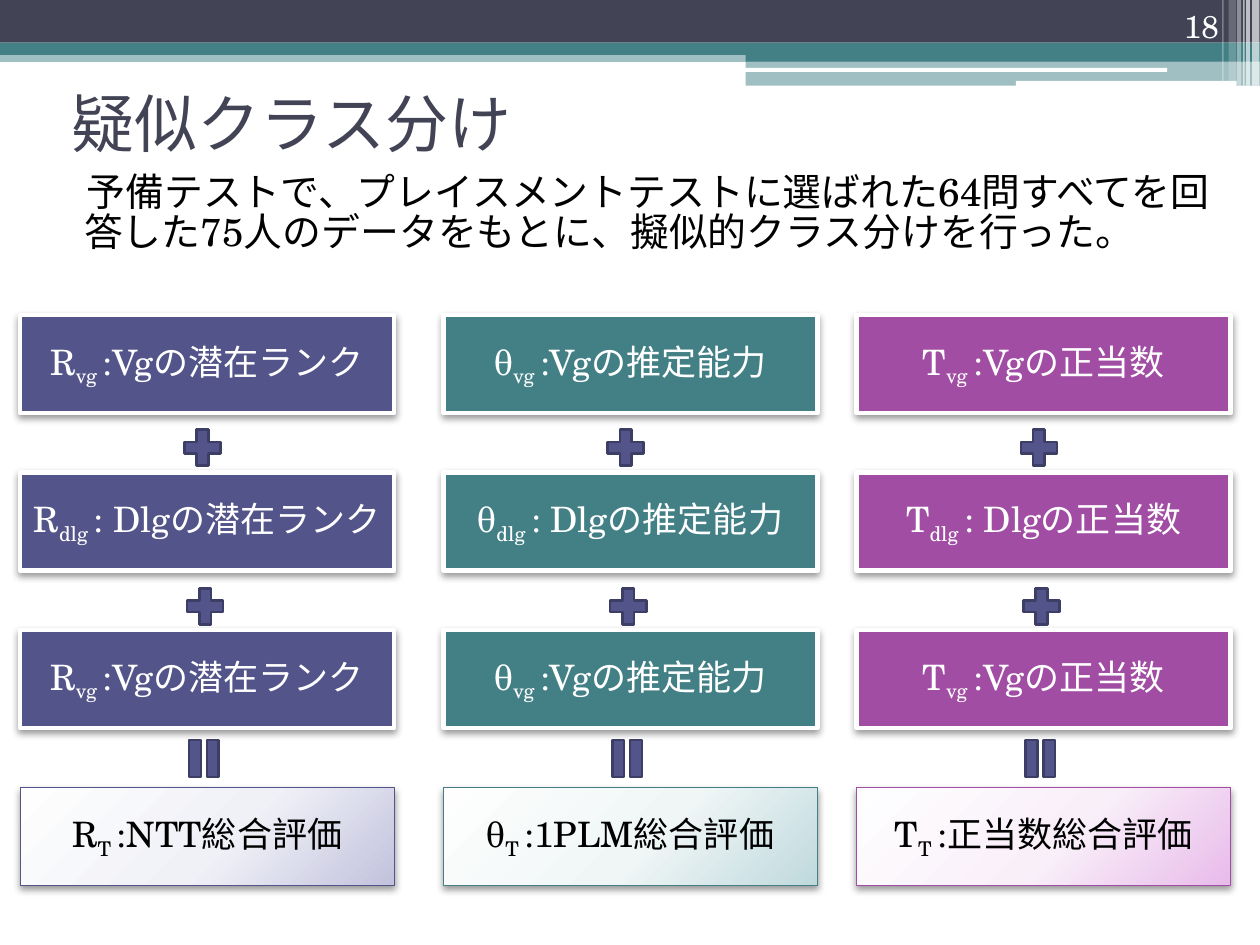
"""Build the slide on simulated class placement: three columns of scores added to a total."""
from pptx import Presentation
from pptx import util as u
from pptx.dml.color import RGBColor
from pptx.enum import shapes, text
from pptx.oxml import parse_xml
from pptx.oxml.ns import nsdecls, qn

COLORS = {"ink": "424456", "teal": "438086", "indigo": "53548A", "purple": "A04DA3",
          "edge": "3D3E66", "white": "FFFFFF", "black": "000000"}
SERIF, SANS = "TeX Gyre Schola", "Lato"
SHAPE = shapes.MSO_SHAPE

TITLE = "疑似クラス分け"
BODY = "予備テストで、プレイスメントテストに選ばれた64問すべてを回答した75人のデータをもとに、擬似的クラス分けを行った。"
NUMBER = "18"

COLUMNS = [
    {"left": 0.41, "symbol": "R", "score": "の潜在ランク", "total": ":NTT総合評価",
     "color": "indigo", "tints": ("FEFEFE", "F0F1F7", "C2C2DD")},
    {"left": 8.94, "symbol": "θ", "score": "の推定能力", "total": ":1PLM総合評価",
     "color": "teal", "tints": ("FEFEFE", "F0F6F6", "BFD9DD")},
    {"left": 17.27, "symbol": "T", "score": "の正当数", "total": ":正当数総合評価",
     "color": "purple", "tints": ("FEFEFF", "F9EFF9", "E8BBEA")},
]
TESTS = [("vg ", ":Vg"), ("dlg ", ": Dlg"), ("vg ", ":Vg")]
BOX_TOP, BOX_STEP, BOX_WIDTH, BOX_HEIGHT = 6.35, 3.175, 7.54, 1.98
SIGNS = [(SHAPE.MATH_PLUS, 3.18, 8.53, 0.99, 0), (SHAPE.MATH_PLUS, 3.23, 11.73, 0.99, 0),
         (SHAPE.MATH_EQUAL, 3.19, 14.78, 1.02, 90)]

BANDS = [
    (SHAPE.RECTANGLE, (0, 1.02, 25.4, 0.23), "teal", 50),
    (SHAPE.RECTANGLE, (0, 0, 25.4, 0.86), "ink", 100),
    (SHAPE.RECTANGLE, (0, 0.86, 25.4, 0.25), "teal", 100),
    (SHAPE.RECTANGLE, (15.03, 0.99, 10.37, 0.25), "teal", 100),
    (SHAPE.RECTANGLE, (15.03, 1.23, 10.37, 0.5), "teal", 50),
    (SHAPE.ROUNDED_RECTANGLE, (15.02, 1.37, 8.51, 0.08), "white", 100),
    (SHAPE.ROUNDED_RECTANGLE, (20.48, 1.63, 4.45, 0.1), "white", 100),
]
STRIPES = [(25.24, 0.15, 1.73, 65), (25.12, 0.08, 1.73, 65), (25.06, 0.03, 1.73, 60),
           (24.94, 0.08, 1.73, 40), (24.77, 0.15, 1.63, 20), (24.64, 0.03, 1.63, 30)]


def rgb(name):
    return RGBColor.from_string(COLORS[name])


def place(item, left, top, width, height):
    item.left, item.top, item.width, item.height = map(u.Cm, (left, top, width, height))


def add_figure(page, kind, area, fill, line=None, weight=0):
    figure = page.shapes.add_shape(kind, *map(u.Cm, area))
    figure.shadow.inherit = False
    figure.fill.solid()
    figure.fill.fore_color.rgb = rgb(fill)
    if line:
        figure.line.color.rgb = rgb(line)
        figure.line.width = u.Pt(weight)
    else:
        figure.line.fill.background()
    return figure


def add_band(page, kind, area, fill, opacity):
    band = add_figure(page, kind, area, fill)
    if opacity < 100:
        color = band._element.spPr.find(qn("a:solidFill"))[0]
        color.append(parse_xml(f'<a:alpha {nsdecls("a")} val="{opacity * 1000}"/>'))


def style(span, size, color, font=SERIF):
    span.font.size, span.font.name = u.Pt(size), font
    span.font.color.rgb = rgb(color)


def add_shadow(box):
    box._element.spPr.find(qn("a:effectLst")).append(parse_xml(
        f'<a:outerShdw {nsdecls("a")} blurRad="{u.Pt(4.1)}" dist="{u.Pt(2)}" dir="5400000" '
        'rotWithShape="0"><a:srgbClr val="000000"><a:alpha val="40000"/></a:srgbClr></a:outerShdw>'))


def tint(box, tints):
    stops = "".join(f'<a:gs pos="{spot * 1000}"><a:srgbClr val="{value}"/></a:gs>'
                    for spot, value in zip((0, 55, 100), tints))
    gradient = parse_xml(
        f'<a:gradFill {nsdecls("a")} rotWithShape="1"><a:gsLst>{stops}</a:gsLst><a:path path="circle">'
        '<a:fillToRect l="-40000" t="-90000" r="140000" b="190000"/></a:path></a:gradFill>')
    properties = box._element.spPr
    properties.replace(properties.find(qn("a:solidFill")), gradient)


def add_box(page, column, row, words, ink, line, weight):
    area = (column["left"], BOX_TOP + row * BOX_STEP, BOX_WIDTH, BOX_HEIGHT)
    box = add_figure(page, SHAPE.RECTANGLE, area, column["color"], line, weight)
    add_shadow(box)
    box.text_frame.vertical_anchor = text.MSO_ANCHOR.MIDDLE
    para = box.text_frame.paragraphs[0]
    para.alignment = text.PP_ALIGN.CENTER
    for index, word in enumerate(words):
        span = para.add_run()
        span.text = word
        style(span, 20, ink)
        if index == 1:
            span.font._element.set("baseline", "-25000")
    return box


def add_column(page, column):
    for row, (subscript, test) in enumerate(TESTS):
        words = (column["symbol"], subscript, test + column["score"])
        add_box(page, column, row, words, "white", "white", 2.5)
    words = (column["symbol"], "T ", column["total"])
    total = add_box(page, column, len(TESTS), words, "black", column["color"], 0.75)
    tint(total, column["tints"])
    for kind, offset, top, size, turn in SIGNS:
        area = (column["left"] + offset, top, size, size)
        add_figure(page, kind, area, "indigo", "edge", 1.5).rotation = turn


def fill_text(page):
    title, body = page.shapes.title, page.placeholders[1]
    number = page.shapes.add_textbox(0, 0, 0, 0)
    jobs = [
        (title, (1.19, 1.57, 22.86, 1.78), TITLE, 36, "ink", SANS, "MIDDLE", "LEFT"),
        (body, (1.19, 3.38, 23.72, 2.77), BODY, 22.2, "black", SERIF, "TOP", "LEFT"),
        (number, (22.71, 0, 2.11, 1.02), NUMBER, 18, "white", SERIF, "BOTTOM", "RIGHT"),
    ]
    for item, area, words, size, color, font, anchor, side in jobs:
        place(item, *area)
        page.shapes._spTree.append(item._element)
        frame = item.text_frame
        frame.text = words
        frame.word_wrap = True
        frame.auto_size = text.MSO_AUTO_SIZE.NONE
        frame.vertical_anchor = text.MSO_ANCHOR[anchor]
        para = frame.paragraphs[0]
        para.alignment = text.PP_ALIGN[side]
        style(para.runs[0], size, color, font)
    para = body.text_frame.paragraphs[0]
    para.space_before, para.line_spacing = u.Pt(3), 0.87
    properties = para._p.get_or_add_pPr()
    properties.set("marL", str(u.Cm(0.25)))
    properties.set("indent", str(u.Cm(0.05)))
    properties.append(parse_xml(f'<a:buNone {nsdecls("a")}/>'))


def main():
    deck = Presentation()
    deck.slide_width, deck.slide_height = u.Cm(25.4), u.Cm(19.05)
    page = deck.slides.add_slide(deck.slide_layouts[1])
    for band in BANDS:
        add_band(page, *band)
    for left, width, height, opacity in STRIPES:
        add_band(page, SHAPE.RECTANGLE, (left, 0, width, height), "white", opacity)
    fill_text(page)
    for column in COLUMNS:
        add_column(page, column)
    deck.save("out.pptx")


if __name__ == "__main__":
    main()
